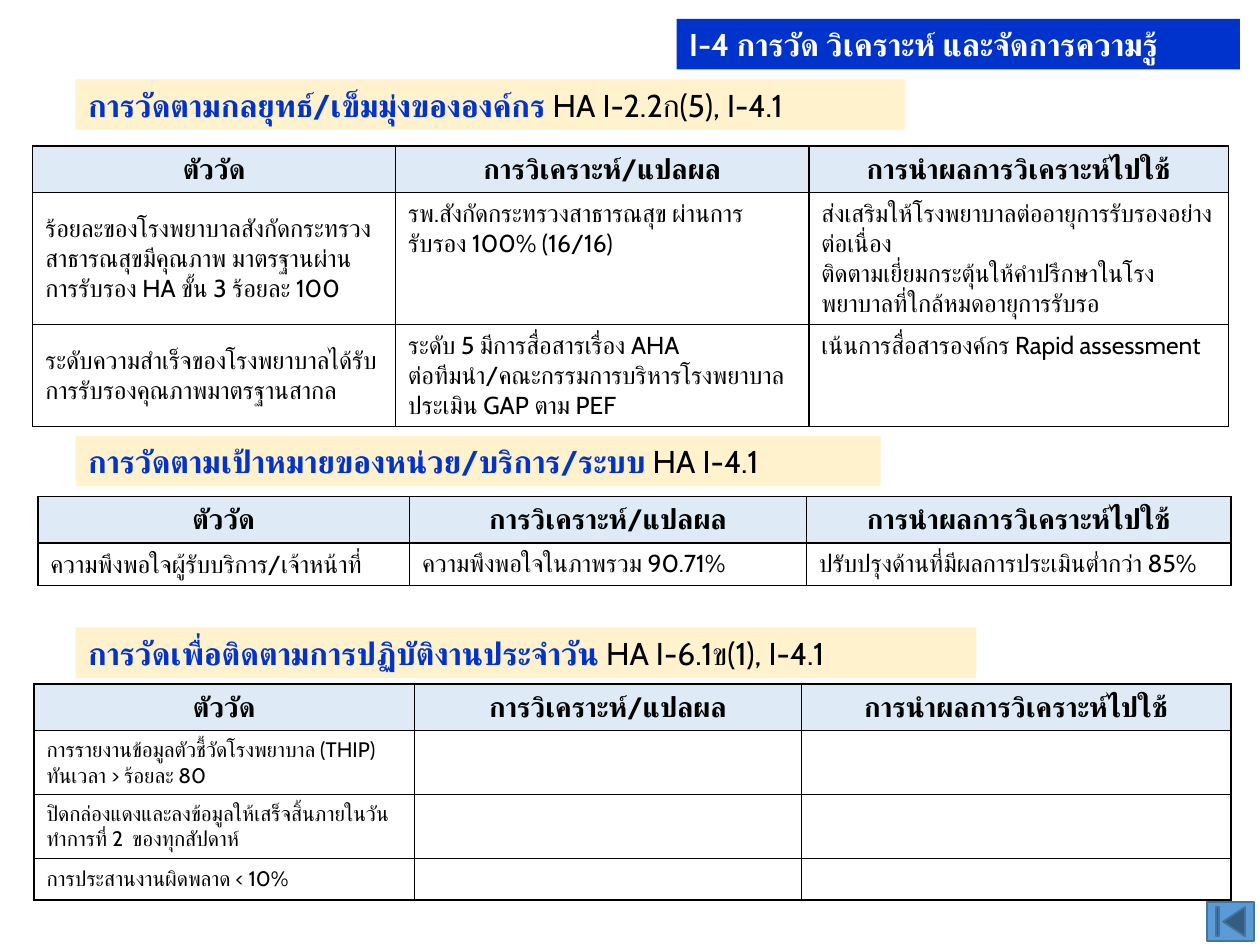
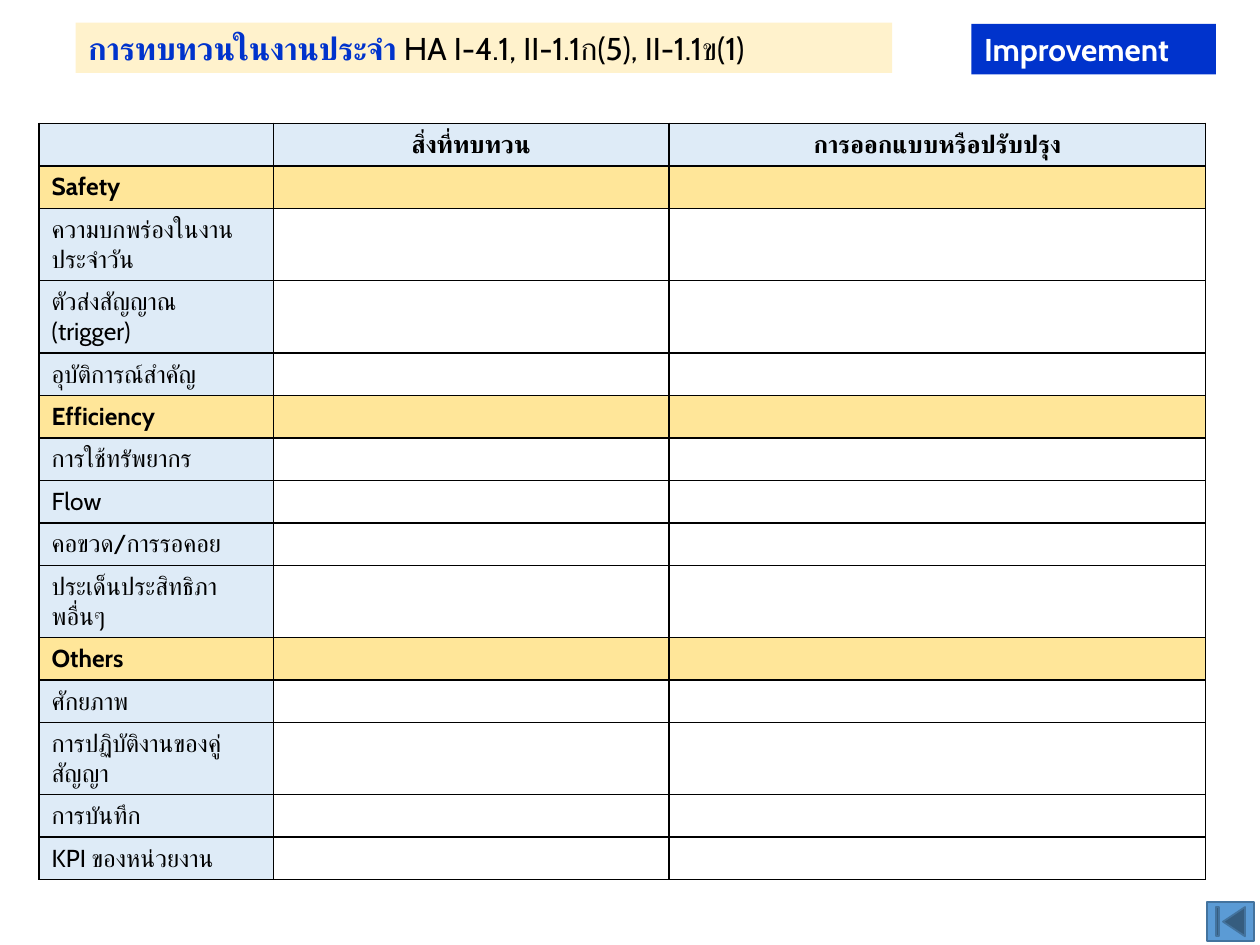
from lxml.etree import SubElement
from pptx import Presentation
from pptx.dml.color import RGBColor
from pptx.enum.shapes import MSO_SHAPE
from pptx.enum.text import MSO_ANCHOR, MSO_AUTO_SIZE, PP_ALIGN
from pptx.oxml.ns import qn
from pptx.util import Inches, Pt

FONT = "Cabin"
BLACK, WHITE, BLUE = "000000", "FFFFFF", "0033CC"
CREAM, PALE_BLUE, GOLD = "FFF2CC", "DEEBF7", "FFE699"
BUTTON_FILL, BUTTON_LINE = "5B9BD5", "43739E"

SECTION_LEFT, BAND_HEIGHT = 0.6, 0.4
HEADER_ROW, ONE_LINE, TWO_LINES = 0.36, 0.33, 0.5
REVIEW_ONE_LINE, REVIEW_TWO_LINES = 0.335, 0.57

MEASURE_HEADINGS = ["ตัววัด", "การวิเคราะห์/แปลผล", "การนำผลการวิเคราะห์ไปใช้"]

STRATEGY_ROWS = [
    ["ร้อยละของโรงพยาบาลสังกัดกระทรวงสาธารณสุขมีคุณภาพ มาตรฐานผ่านการรับรอง HA ขั้น 3 ร้อยละ 100",
     "รพ.สังกัดกระทรวงสาธารณสุข ผ่านการรับรอง 100% (16/16)",
     "ส่งเสริมให้โรงพยาบาลต่ออายุการรับรองอย่างต่อเนื่อง\n"
     "ติดตามเยี่ยมกระตุ้นให้คำปรึกษาในโรงพยาบาลที่ใกล้หมดอายุการรับรอ"],
    ["ระดับความสำเร็จของโรงพยาบาลได้รับการรับรองคุณภาพมาตรฐานสากล",
     "ระดับ 5 มีการสื่อสารเรื่อง AHA ต่อทีมนำ/คณะกรรมการบริหารโรงพยาบาล ประเมิน GAP ตาม PEF",
     "เน้นการสื่อสารองค์กร Rapid assessment"],
]
UNIT_ROWS = [
    ["ความพึงพอใจผู้รับบริการ/เจ้าหน้าที่", "ความพึงพอใจในภาพรวม 90.71%",
     "ปรับปรุงด้านที่มีผลการประเมินต่ำกว่า 85%"],
]
DAILY_ROWS = [
    ["การรายงานข้อมูลตัวชี้วัดโรงพยาบาล (THIP) ทันเวลา > ร้อยละ 80", "", ""],
    ["ปิดกล่องแดงและลงข้อมูลให้เสร็จสิ้นภายในวันทำการที่ 2  ของทุกสัปดาห์", "", ""],
    ["การประสานงานผิดพลาด < 10%", "", ""],
]
REVIEW_HEADINGS = ["", "สิ่งที่ทบทวน", "การออกแบบหรือปรับปรุง"]
REVIEW_GROUPS = {
    "Safety": ["ความบกพร่องในงานประจำวัน", "ตัวส่งสัญญาณ (trigger)", "อุบัติการณ์สำคัญ"],
    "Efficiency": ["การใช้ทรัพยากร", "Flow", "คอขวด/การรอคอย", "ประเด็นประสิทธิภาพอื่นๆ"],
    "Others": ["ศักยภาพ", "การปฏิบัติงานของคู่สัญญา", "การบันทึก", "KPI ของหน่วยงาน"],
}
TWO_LINE_TOPICS = {"ความบกพร่องในงานประจำวัน", "ตัวส่งสัญญาณ (trigger)",
                   "ประเด็นประสิทธิภาพอื่นๆ", "การปฏิบัติงานของคู่สัญญา"}


def rgb(value):
    """Turn a hex string into a colour."""
    return RGBColor.from_string(value)


def paint(target, fill):
    """Give a shape or cell a solid fill, or none."""
    if fill:
        target.fill.solid()
        target.fill.fore_color.rgb = rgb(fill)
    else:
        target.fill.background()


def write(paragraph, text, size=18, color=BLACK, bold=False, align=PP_ALIGN.LEFT):
    """Append formatted text; an empty text only sets the height of the line."""
    paragraph.alignment = align
    if not text:
        paragraph._p.get_or_add_endParaRPr().set("sz", str(size * 100))
        return
    run = paragraph.add_run()
    run.text = text
    run.font.size, run.font.bold, run.font.name = Pt(size), bold, FONT
    run.font.color.rgb = rgb(color)
    SubElement(run._r.get_or_add_rPr(), qn("a:cs"), typeface=FONT)


def prepare_frame(frame):
    """Set the wrapping and anchoring that all bands share."""
    frame.word_wrap = True
    frame.auto_size = MSO_AUTO_SIZE.NONE
    frame.vertical_anchor = MSO_ANCHOR.TOP
    return frame.paragraphs[0]


def add_title_slide(prs, title, left, top, width):
    """Add a slide whose title is a blue band at the upper right."""
    slide = prs.slides.add_slide(prs.slide_layouts[5])
    band = slide.shapes.title
    band.left, band.top = Inches(left), Inches(top)
    band.width, band.height = Inches(width), Inches(BAND_HEIGHT)
    paint(band, BLUE)
    write(prepare_frame(band.text_frame), title, color=WHITE, bold=True)
    return slide


def add_section(slide, heading, standard, top, width):
    """Add a cream band with a blue heading and its standard's number."""
    band = slide.shapes.add_shape(MSO_SHAPE.RECTANGLE, Inches(SECTION_LEFT), Inches(top),
                                  Inches(width), Inches(BAND_HEIGHT))
    band.shadow.inherit = False
    band.line.fill.background()
    paint(band, CREAM)
    paragraph = prepare_frame(band.text_frame)
    write(paragraph, heading + " ", color=BLUE, bold=True)
    write(paragraph, standard)


def add_start_button(slide):
    """Add the return button in the lower right corner."""
    button = slide.shapes.add_shape(MSO_SHAPE.ACTION_BUTTON_BEGINNING, Inches(9.58), Inches(7.16),
                                    Inches(0.37), Inches(0.31))
    button.shadow.inherit = False
    paint(button, BUTTON_FILL)
    button.line.color.rgb = rgb(BUTTON_LINE)
    button.line.width = Pt(1)


def add_borders(cell):
    """Draw a thin black line on all sides of a cell."""
    properties = cell._tc.get_or_add_tcPr()
    for side in ("a:lnL", "a:lnR", "a:lnT", "a:lnB"):
        line = SubElement(properties, qn(side), w=str(Pt(1)))
        SubElement(SubElement(line, qn("a:solidFill")), qn("a:srgbClr"), val=BLACK)


def fill_cell(cell, text, fill=None, middle=False, **style):
    """Write one bordered cell, a paragraph for each line of its text."""
    add_borders(cell)
    paint(cell, fill)
    cell.vertical_anchor = MSO_ANCHOR.MIDDLE if middle else MSO_ANCHOR.TOP
    for index, line in enumerate(text.split("\n")):
        frame = cell.text_frame
        write(frame.add_paragraph() if index else frame.paragraphs[0], line, **style)


def add_grid(slide, left, top, widths, heights):
    """Add an unstyled table with the given column widths and row heights."""
    table = slide.shapes.add_table(len(heights), len(widths), Inches(left), Inches(top),
                                   Inches(sum(widths)), Inches(sum(heights))).table
    table.first_row = table.horz_banding = False
    for column, width in zip(table.columns, widths):
        column.width = Inches(width)
    for row, height in zip(table.rows, heights):
        row.height = Inches(height)
    return table


def add_measures(slide, rows, left, top, widths, heights, size=14):
    """Add a table of measures, their analysis and its use."""
    table = add_grid(slide, left, top, widths, [HEADER_ROW] + heights)
    for c, heading in enumerate(MEASURE_HEADINGS):
        fill_cell(table.cell(0, c), heading, PALE_BLUE, middle=c == 0,
                  size=16, bold=True, align=PP_ALIGN.CENTER)
    for r, row in enumerate(rows, 1):
        for c, text in enumerate(row):
            fill_cell(table.cell(r, c), text, middle=c == 0, size=size)


def add_review(slide, left, top, widths):
    """Add the review table: gold group rows, each followed by its topics."""
    labels = [label for group, topics in REVIEW_GROUPS.items() for label in [group, *topics]]
    heights = [REVIEW_TWO_LINES if label in TWO_LINE_TOPICS else REVIEW_ONE_LINE
               for label in labels]
    table = add_grid(slide, left, top, widths, [REVIEW_ONE_LINE] + heights)
    for c, heading in enumerate(REVIEW_HEADINGS):
        fill_cell(table.cell(0, c), heading, PALE_BLUE, middle=True,
                  size=14, bold=True, align=PP_ALIGN.CENTER)
    for r, label in enumerate(labels, 1):
        is_group = label in REVIEW_GROUPS
        fills = [GOLD] * 3 if is_group else [PALE_BLUE, None, None]
        for c, (text, fill) in enumerate(zip([label, "", ""], fills)):
            fill_cell(table.cell(r, c), text, fill, middle=True, size=14, bold=is_group)


def main():
    """Build both slides and save them."""
    prs = Presentation()
    prs.slide_width, prs.slide_height = Inches(10), Inches(7.5)

    measures = add_title_slide(prs, "I-4 การวัด วิเคราะห์ และจัดการความรู้", 5.37, 0.15, 4.47)
    add_section(measures, "การวัดตามกลยุทธ์/เข็มมุ่งขององค์กร", "HA I-2.2ก(5), I-4.1", 0.63, 6.58)
    add_measures(measures, STRATEGY_ROWS, 0.26, 1.16, [2.88, 3.28, 3.33], [1.04, 0.8])
    add_section(measures, "การวัดตามเป้าหมายของหน่วย/บริการ/ระบบ", "HA I-4.1", 3.46, 6.39)
    add_measures(measures, UNIT_ROWS, 0.3, 3.94, [2.95, 3.15, 3.37], [ONE_LINE])
    add_section(measures, "การวัดเพื่อติดตามการปฏิบัติงานประจำวัน", "HA I-6.1ข(1), I-4.1", 4.98, 7.15)
    add_measures(measures, DAILY_ROWS, 0.27, 5.43, [3.02, 3.07, 3.41],
                 [TWO_LINES, TWO_LINES, ONE_LINE], size=12)
    add_start_button(measures)

    review = add_title_slide(prs, "Improvement", 7.71, 0.19, 1.94)
    add_section(review, "การทบทวนในงานประจำ", "HA I-4.1, II-1.1ก(5), II-1.1ข(1)", 0.18, 6.48)
    add_review(review, 0.31, 0.98, [1.86, 3.14, 4.26])
    add_start_button(review)

    prs.save("out.pptx")


if __name__ == "__main__":
    main()
